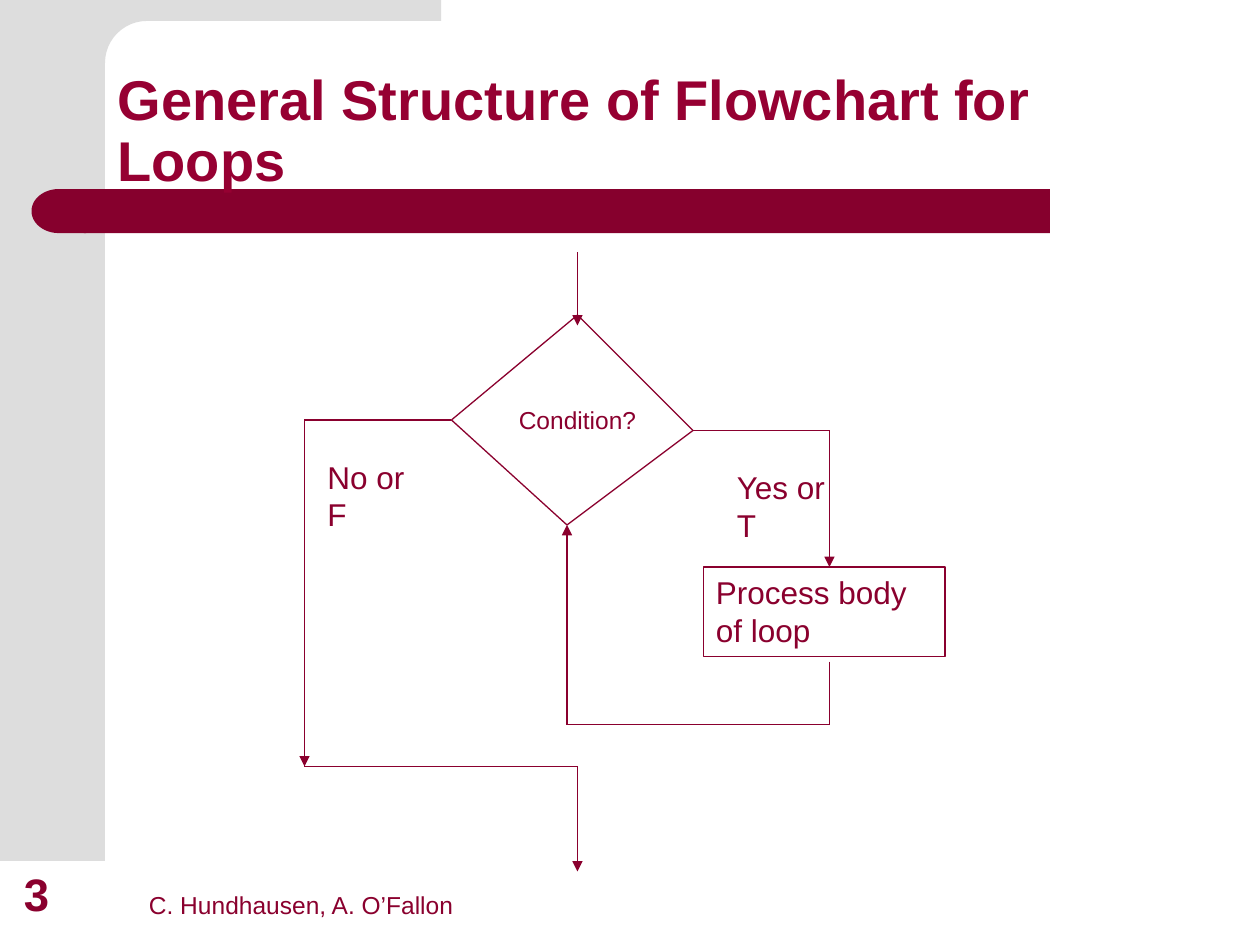
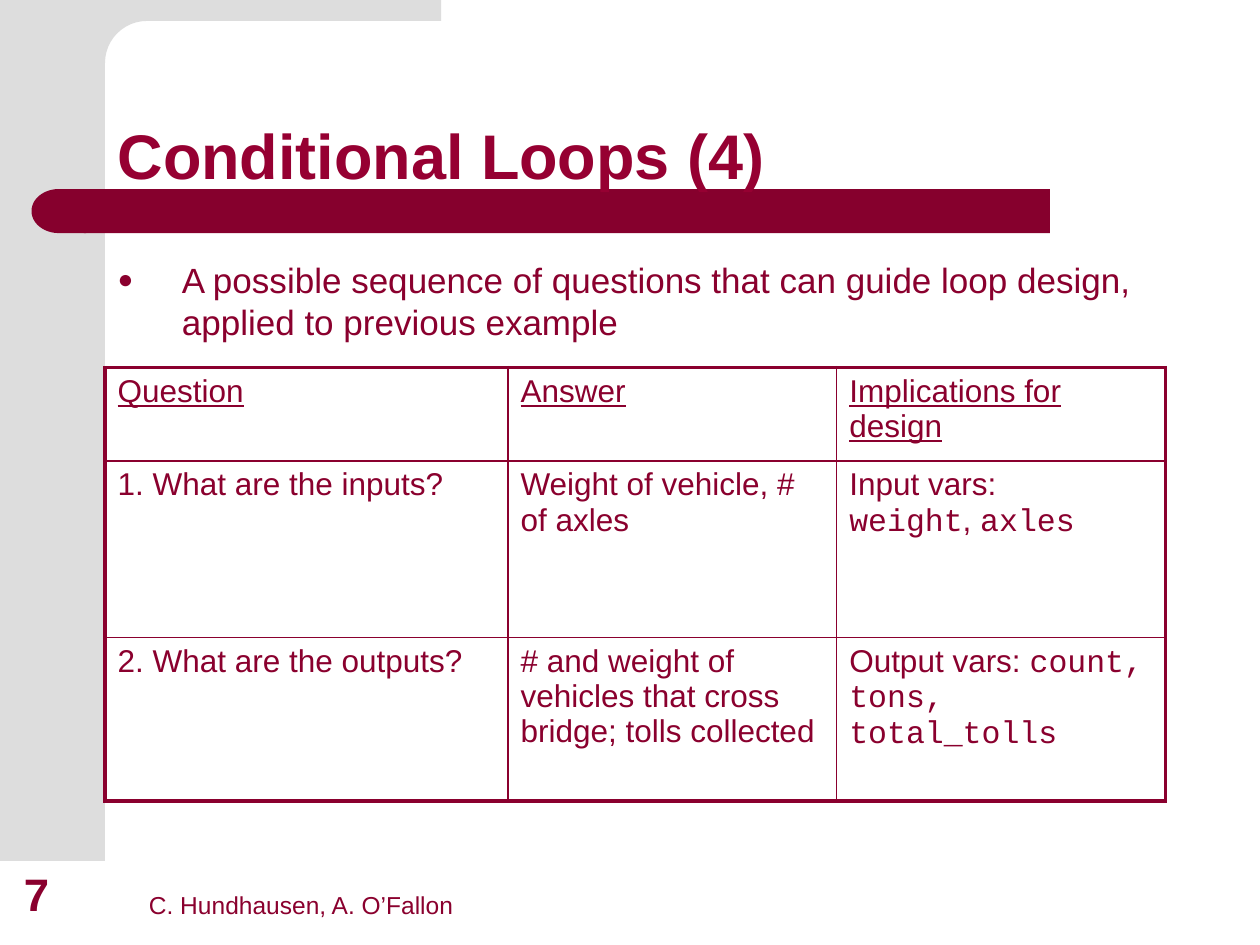
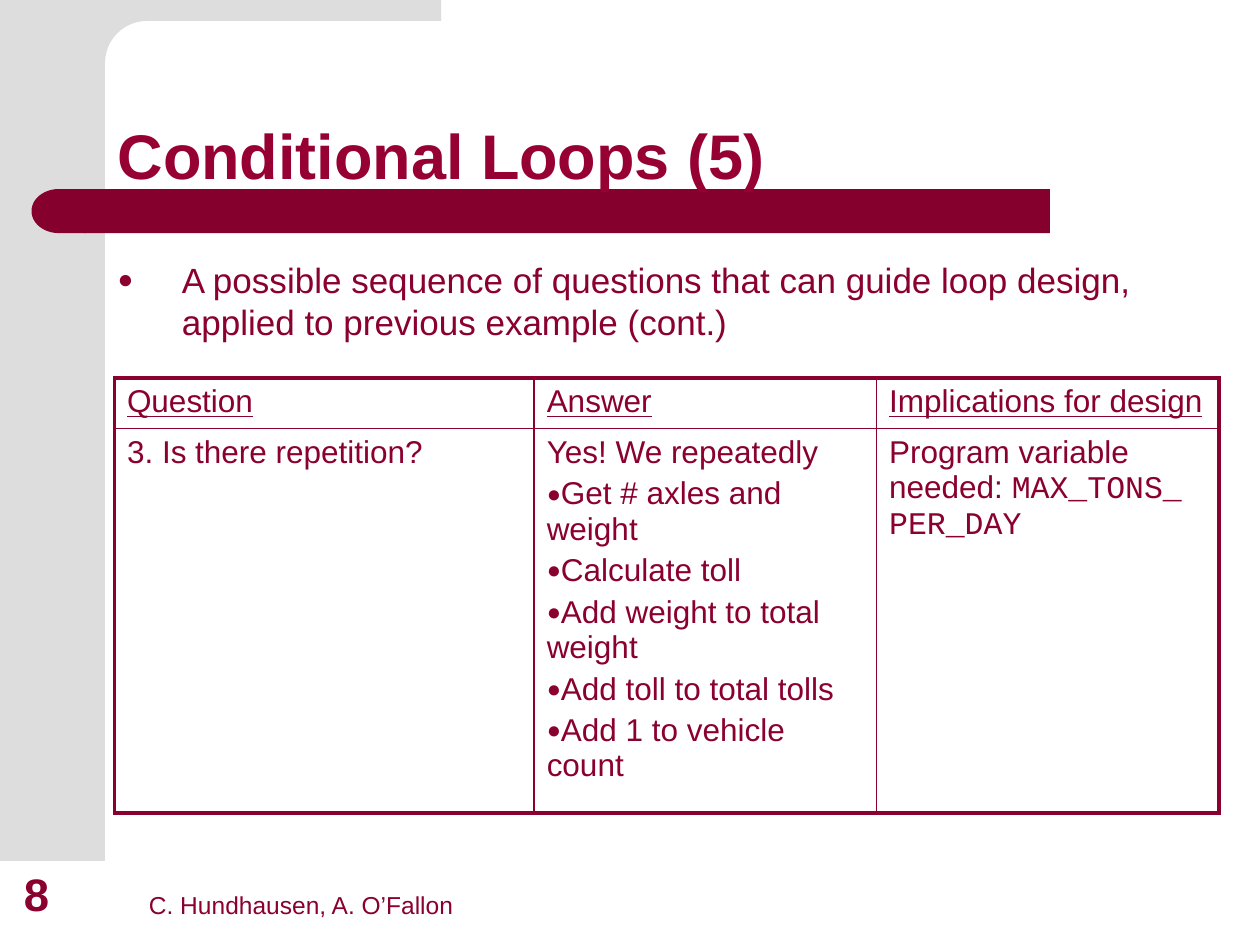
from dataclasses import dataclass
from itertools import pairwise
from math import cos, pi, sin

from lxml.etree import SubElement
from pptx import Presentation
from pptx.dml.color import RGBColor
from pptx.enum.shapes import MSO_CONNECTOR, MSO_SHAPE
from pptx.enum.text import MSO_ANCHOR, MSO_AUTO_SIZE, PP_ALIGN
from pptx.oxml.ns import qn
from pptx.util import Inches, Pt

COLUMNS = 120
TITLE_AND_BODY, TITLE_ONLY = 1, 5


@dataclass(frozen=True)
class Theme:
    ink: str = "8A002E"
    title: str = "960032"
    band: str = "86002D"
    panel: str = "DDDDDD"
    font: str = "Arial"
    code_font: str = "Courier New"
    title_size: int = 36
    long_title_size: int = 32
    number_size: int = 26
    body_size: int = 20
    label_size: int = 18
    small_size: int = 14
    thin_line: float = 0.75
    inner_border: float = 1
    outer_border: float = 2.25


def add_bullet(paragraph, color, indent=0):
    properties = paragraph._p.get_or_add_pPr()
    properties.set("marL", str(indent))
    properties.set("indent", str(-indent))
    bullet_color = SubElement(properties, qn("a:buClr"))
    SubElement(bullet_color, qn("a:srgbClr"), val=color)
    SubElement(properties, qn("a:buSzPct"), val="75000")
    SubElement(properties, qn("a:buFont"), typeface="Arial")
    SubElement(properties, qn("a:buChar"), char="●")


class Deck:
    """Holds the theme and the current slide; lengths are square grid units."""

    def __init__(self, theme):
        self.theme = theme
        self.presentation = Presentation()
        self.presentation.slide_width = Inches(10)
        self.presentation.slide_height = Inches(7.5)
        self.unit = self.presentation.slide_width / COLUMNS
        self.slide = None

    def grid(self, *lengths):
        return [round(length * self.unit) for length in lengths]

    def new_slide(self, number, title, layout, title_size=None):
        first = self.slide is None
        self.slide = self.presentation.slides.add_slide(
            self.presentation.slide_layouts[layout])
        if first:
            self.background()
        self.title(title, title_size or self.theme.title_size)
        self.text("C. Hundhausen, A. O’Fallon", 13, 82, 45, 6.2,
                  self.theme.small_size, anchor=MSO_ANCHOR.BOTTOM)
        self.text(str(number), 1.1, 82, 7.7, 6.3, self.theme.number_size,
                  bold=True, anchor=MSO_ANCHOR.BOTTOM)

    def background(self):
        """Draws the shared panel and band, and hands them to the slide master."""
        theme = self.theme
        panel = self.shape(MSO_SHAPE.RECTANGLE, 0, 0, 10, 82, theme.panel)
        arc = [(14 - 4 * sin(step * pi / 24), 6 - 4 * cos(step * pi / 24))
               for step in range(13)]
        corner = self.outline([(42, 0), (42, 2), *arc, (10, 0)], theme.panel)
        band = self.shape(MSO_SHAPE.ROUNDED_RECTANGLE, 8, 18, 92, 4.2, theme.band)
        band.adjustments[0] = 0
        cap = self.shape(MSO_SHAPE.FLOWCHART_DELAY, 3, 18, 5.2, 4.2, theme.band)
        cap.element.spPr.xfrm.set("flipH", "1")
        master = self.presentation.slide_master.shapes.element
        for shape_id, shape in enumerate((panel, corner, band, cap), start=101):
            shape.element.nvSpPr.cNvPr.set("id", str(shape_id))
            master.append(shape.element)

    def style_shape(self, shape, fill=None):
        shape.shadow.inherit = False
        if fill:
            shape.fill.solid()
            shape.fill.fore_color.rgb = RGBColor.from_string(fill)
            shape.line.fill.background()
        else:
            shape.fill.background()
            shape.line.color.rgb = RGBColor.from_string(self.theme.ink)
            shape.line.width = Pt(self.theme.thin_line)
        return shape

    def shape(self, kind, left, top, width, height, fill=None):
        shape = self.slide.shapes.add_shape(kind, *self.grid(left, top, width, height))
        return self.style_shape(shape, fill)

    def outline(self, points, fill):
        start, *others = [tuple(self.grid(*point)) for point in points]
        builder = self.slide.shapes.build_freeform(*start)
        builder.add_line_segments(others, close=True)
        return self.style_shape(builder.convert_to_shape(), fill)

    def style_font(self, font, size, color=None, bold=False):
        font.name = self.theme.font
        font.size = Pt(size)
        font.bold = bold
        font.color.rgb = RGBColor.from_string(color or self.theme.ink)

    def fill_paragraph(self, paragraph, text, size, **style):
        """Adds styled text; backticks enclose code and a newline breaks the line."""
        paragraph.alignment = PP_ALIGN.LEFT
        self.style_font(paragraph.font, size, **style)
        for index, piece in enumerate(text.split("`")):
            for line_index, line in enumerate(piece.split("\n")):
                if line_index:
                    paragraph.add_line_break()
                if line:
                    run = paragraph.add_run()
                    run.text = line
                    if index % 2:
                        run.font.name = self.theme.code_font

    def place(self, placeholder, left, top, width, height, anchor):
        (placeholder.left, placeholder.top,
         placeholder.width, placeholder.height) = self.grid(left, top, width, height)
        frame = placeholder.text_frame
        frame.auto_size = MSO_AUTO_SIZE.NONE
        frame.vertical_anchor = anchor
        return frame.paragraphs[0]

    def title(self, text, size):
        paragraph = self.place(self.slide.shapes.title, 10, 4, 104, 15,
                               MSO_ANCHOR.BOTTOM)
        paragraph.line_spacing = 0.9
        self.fill_paragraph(paragraph, text, size, color=self.theme.title, bold=True)

    def bullet(self, text):
        paragraph = self.place(self.slide.placeholders[1], 10, 24, 101, 48.8,
                               MSO_ANCHOR.TOP)
        paragraph.space_before = Pt(0)
        add_bullet(paragraph, self.theme.ink, Inches(0.51))
        self.fill_paragraph(paragraph, text, self.theme.body_size)

    def text(self, text, left, top, width, height, size, bold=False,
             anchor=MSO_ANCHOR.TOP, align=PP_ALIGN.LEFT):
        box = self.slide.shapes.add_textbox(*self.grid(left, top, width, height))
        frame = box.text_frame
        frame.word_wrap = True
        frame.vertical_anchor = anchor
        self.fill_paragraph(frame.paragraphs[0], text, size, bold=bold)
        frame.paragraphs[0].alignment = align

    def process(self, text, left, top, width, height):
        shape = self.shape(MSO_SHAPE.RECTANGLE, left, top, width, height)
        shape.text_frame.vertical_anchor = MSO_ANCHOR.TOP
        self.fill_paragraph(shape.text_frame.paragraphs[0], text, self.theme.label_size)

    def line(self, start, end, arrow=False):
        connector = self.slide.shapes.add_connector(
            MSO_CONNECTOR.STRAIGHT, *self.grid(*start, *end))
        connector.line.color.rgb = RGBColor.from_string(self.theme.ink)
        connector.line.width = Pt(self.theme.thin_line)
        properties = connector.element.spPr
        if arrow:
            SubElement(properties.find(qn("a:ln")), qn("a:tailEnd"), type="triangle")
        SubElement(properties, qn("a:effectLst"))

    def route(self, *points, arrows=()):
        """Joins the points in turn; arrows lists the segments with an arrowhead."""
        for index, (start, end) in enumerate(pairwise(points)):
            self.line(start, end, index in arrows)

    def border(self, cell, widths):
        properties = cell._tc.get_or_add_tcPr()
        for position, (side, width) in enumerate(widths.items()):
            edge = SubElement(properties, qn(f"a:ln{side}"), w=str(Pt(width)))
            fill = SubElement(edge, qn("a:solidFill"))
            SubElement(fill, qn("a:srgbClr"), val=self.theme.ink)
            properties.insert(position, edge)

    def table(self, rows, left, top, width, heights, shares=(0.38, 0.31, 0.31)):
        """Fills a table; in a cell that is a list, all but the first line are bullets."""
        theme = self.theme
        last_row, last_column = len(rows) - 1, len(shares) - 1
        table = self.slide.shapes.add_table(
            len(rows), len(shares), *self.grid(left, top, width, sum(heights))).table
        table.first_row = table.horz_banding = False
        for column, share in zip(table.columns, shares):
            column.width, = self.grid(width * share)
        for row_index, (row, height) in enumerate(zip(rows, heights)):
            table.rows[row_index].height, = self.grid(height)
            for column_index, content in enumerate(row):
                cell = table.cell(row_index, column_index)
                cell.fill.background()
                outer = {"L": column_index == 0, "R": column_index == last_column,
                         "T": row_index == 0, "B": row_index == last_row}
                self.border(cell, {
                    side: theme.outer_border if is_outer else theme.inner_border
                    for side, is_outer in outer.items()})
                lines = [content] if isinstance(content, str) else content
                for index, line in enumerate(lines):
                    paragraph = cell.text_frame.paragraphs[0]
                    if index:
                        paragraph = cell.text_frame.add_paragraph()
                        paragraph.space_before = Pt(0.2 * theme.label_size)
                        add_bullet(paragraph, theme.ink)
                    self.fill_paragraph(paragraph, line, theme.label_size)
                    paragraph.font.underline = row_index == 0


HEADINGS = ["Question", "Answer", "Implications for design"]


def flowchart_slide(deck):
    theme = deck.theme
    deck.new_slide(3, "General Structure of Flowchart for Loops", TITLE_ONLY,
                   theme.long_title_size)
    left, top, right, bottom = (43, 40), (55, 30), (66, 41), (54, 50)
    deck.process("Process body of loop", 67, 54, 23, 8.5)
    deck.text("Condition?", 44, 38, 22, 4, theme.small_size, align=PP_ALIGN.CENTER)
    deck.text("Yes or T", 69, 44, 11, 8.4, theme.label_size)
    deck.text("No or F", 30, 43, 11, 8.4, theme.label_size)
    deck.route(left, top, right, bottom, left)
    deck.route((55, 24), (55, 31), arrows=[0])
    deck.route(right, (79, 41), (79, 54), arrows=[1])
    deck.route((79, 63), (79, 69), (54, 69), bottom, arrows=[2])
    deck.route(left, (29, 40), (29, 73), (55, 73), (55, 83), arrows=[1, 3])


def inputs_outputs_slide(deck):
    deck.new_slide(7, "Conditional Loops (4)", TITLE_AND_BODY)
    deck.bullet("A possible sequence of questions that can guide loop design, "
                "applied to previous example")
    deck.table([
        HEADINGS,
        ["1. What are the inputs?", "Weight of vehicle, # of axles",
         "Input vars:\n`weight`, `axles`"],
        ["2. What are the outputs?",
         "# and weight of vehicles that cross bridge; tolls collected",
         "Output vars: `count, tons, total_tolls`"],
    ], 10, 35, 101, [8.9, 16.8, 15.6])


def repetition_slide(deck):
    deck.new_slide(8, "Conditional Loops (5)", TITLE_AND_BODY)
    deck.bullet("A possible sequence of questions that can guide loop design, "
                "applied to previous example (cont.)")
    deck.table([
        HEADINGS,
        ["3. Is there repetition?",
         ["Yes! We repeatedly", "Get # axles and weight", "Calculate toll",
          "Add weight to total weight", "Add toll to total tolls",
          "Add 1 to vehicle count"],
         "Program variable needed: `MAX_TONS_\nPER_DAY`"],
    ], 10.9, 36, 105.2, [4.6, 34.4])


def main():
    deck = Deck(Theme())
    flowchart_slide(deck)
    inputs_outputs_slide(deck)
    repetition_slide(deck)
    deck.presentation.save("out.pptx")


if __name__ == "__main__":
    main()
